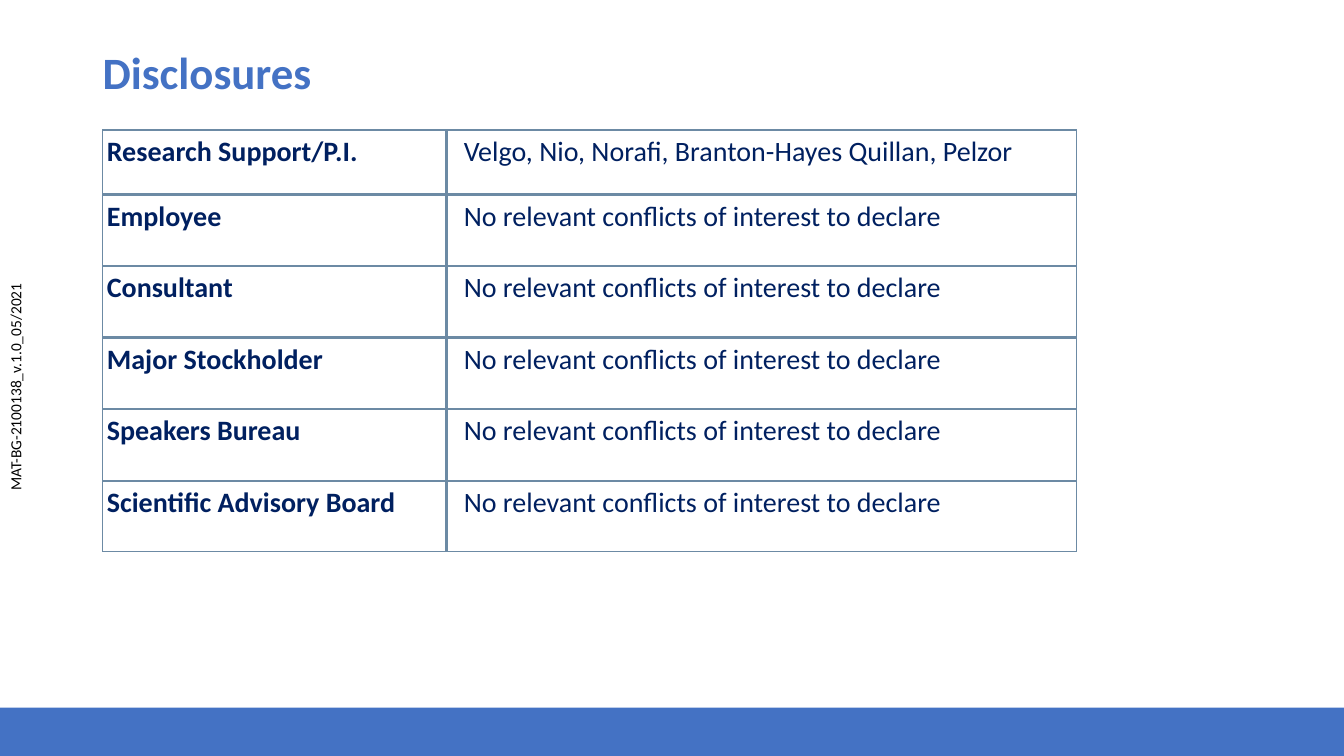
from pptx import Presentation
from pptx.dml.color import RGBColor as RGB
from pptx.enum.shapes import MSO_SHAPE as Shape
from pptx.enum.text import MSO_ANCHOR as Anchor, PP_ALIGN as Align
from pptx.oxml.ns import qn
from pptx.util import Inches, Pt
from lxml.etree import SubElement as Sub

# Content
TITLE = "Disclosures"
CODE = "MAT-BG-2100138_v.1.0_05/2021"
NONE = "No relevant conflicts of interest to declare"
ROWS = [
    ("Research Support/P.I.", "Velgo, Nio, Norafi, Branton-Hayes Quillan, Pelzor"),
    ("Employee", NONE),
    ("Consultant", NONE),
    ("Major Stockholder", NONE),
    ("Speakers Bureau", NONE),
    ("Scientific Advisory Board", NONE),
]

# Theme and layout
THEME = {
    "font": "Calibri", "blue": "4472C4", "navy": "002060", "black": "000000",
    "rule": "6C8AA4", "title": 32, "body": 20, "small": 11,
    "thin": 0.96, "thick": 1.98,
}
WIDE, HIGH, BAND = 13.33, 7.5, 0.48
LEFT, TOP = 1.02, 1.29
COLS = [3.41, 6.25]
TALL = [0.64] + [0.71] * 4 + [0.7]
PADS = [0.04, 0.17]


def write(para, text, size, color, bold=False):
    run = para.add_run()
    run.text = text
    font = run.font
    font.name, font.size, font.bold = THEME["font"], Pt(THEME[size]), bold
    font.color.rgb = RGB.from_string(THEME[color])


def textbox(slide, x, y, w, h):
    box = slide.shapes.add_textbox(Inches(x), Inches(y), Inches(w), Inches(h))
    box.text_frame.word_wrap = True
    return box


def border(cell, outer):
    props = cell._tc.get_or_add_tcPr()
    for side in "LRTB":
        width = Pt(THEME["thin" if side in outer else "thick"])
        line = Sub(props, qn(f"a:ln{side}"), w=str(int(width)))
        fill = Sub(line, qn("a:solidFill"))
        Sub(fill, qn("a:srgbClr"), val=THEME["rule"])


def grid(slide):
    frame = slide.shapes.add_table(
        len(ROWS), len(COLS), Inches(LEFT), Inches(TOP),
        Inches(sum(COLS)), Inches(sum(TALL)))
    table = frame.table
    table.first_row = table.horz_banding = False
    for col, width in zip(table.columns, COLS):
        col.width = Inches(width)
    for r, texts in enumerate(ROWS):
        table.rows[r].height = Inches(TALL[r])
        for c, text in enumerate(texts):
            cell = table.cell(r, c)
            # Thin rules on the outside, thick ones within
            outer = "LR"[c]
            if r == 0:
                outer += "T"
            if r == len(ROWS) - 1:
                outer += "B"
            border(cell, outer)
            cell.fill.background()
            cell.margin_left, cell.margin_right = Inches(PADS[c]), Inches(0.04)
            write(cell.text_frame.paragraphs[0], text, "body", "navy", c == 0)


def main():
    deck = Presentation()
    deck.slide_width, deck.slide_height = Inches(WIDE), Inches(HIGH)
    slide = deck.slides.add_slide(deck.slide_layouts[6])

    # Bottom band
    band = slide.shapes.add_shape(
        Shape.RECTANGLE, 0, Inches(HIGH - BAND), Inches(WIDE), Inches(BAND))
    band.shadow.inherit = False
    band.fill.solid()
    band.fill.fore_color.rgb = RGB.from_string(THEME["blue"])
    band.line.fill.background()

    # Title
    title = textbox(slide, 0.92, 0.19, 11.5, 0.84).text_frame
    title.vertical_anchor = Anchor.BOTTOM
    title.paragraphs[0].line_spacing = 0.9
    write(title.paragraphs[0], TITLE, "title", "blue", True)

    # Disclosure table
    grid(slide)

    # Document code up the left edge
    code = textbox(slide, -2.73, 3.7, 5.76, 0.28)
    code.rotation = 270
    para = code.text_frame.paragraphs[0]
    para.alignment = Align.CENTER
    write(para, CODE, "small", "black")

    deck.save("out.pptx")


if __name__ == "__main__":
    main()
